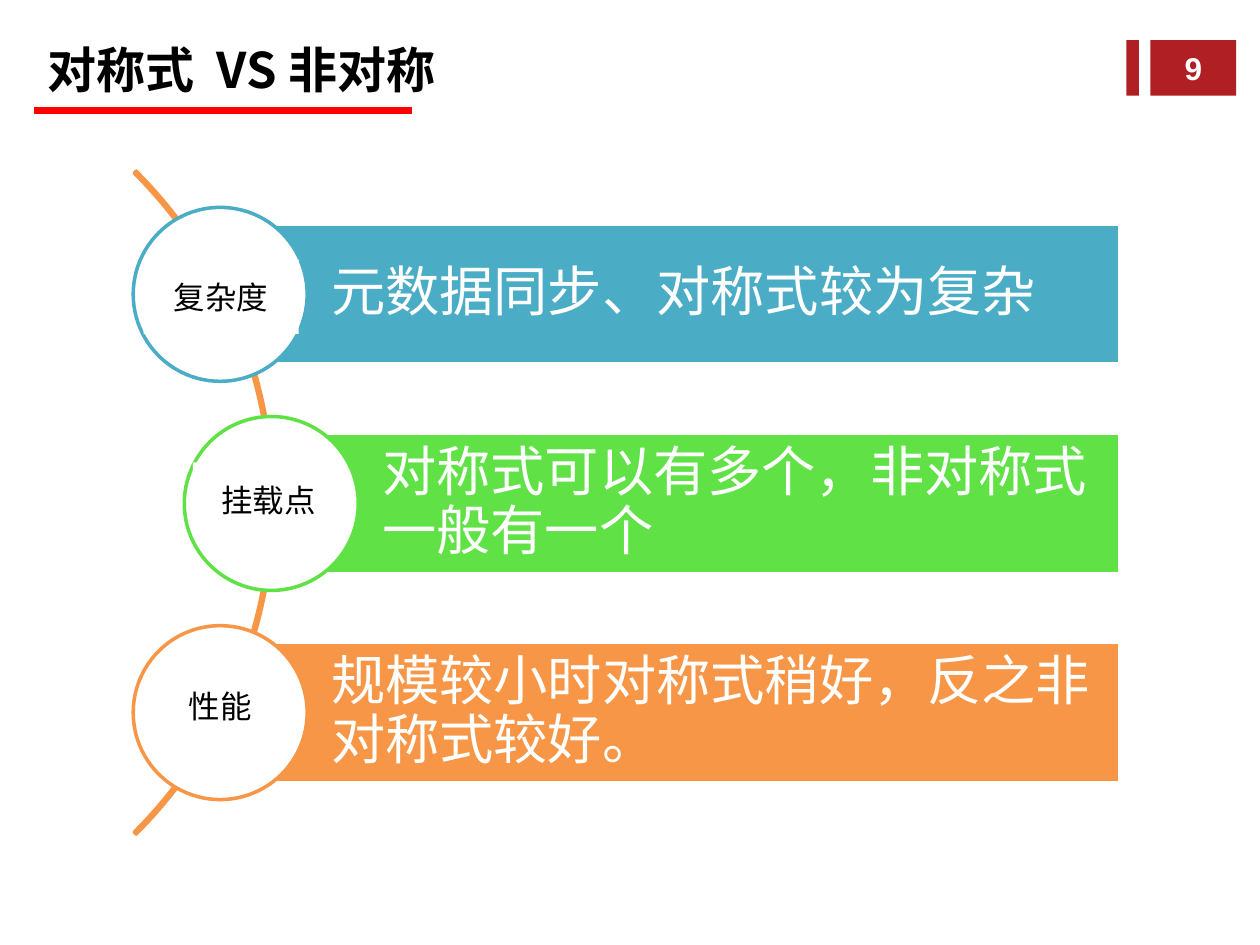
import dataclasses

import lxml.etree
import pptx
import pptx.dml.color
import pptx.enum.shapes
import pptx.enum.text
import pptx.oxml.ns
import pptx.util

Pt = pptx.util.Pt
RGB = pptx.dml.color.RGBColor
Kind = pptx.enum.shapes.MSO_SHAPE
Align = pptx.enum.text.PP_ALIGN
Box = tuple[float, float, float, float]

WHITE = RGB(0xFF, 0xFF, 0xFF)
BLACK = RGB(0, 0, 0)
RED = RGB(0xFF, 0, 0)
DARK = RGB(0xB0, 0x1F, 0x24)
BLUE = RGB(0x4B, 0xAC, 0xC6)
GREEN = RGB(0x60, 0xE1, 0x46)
ORANGE = RGB(0xF7, 0x96, 0x46)
HAN = "Noto Sans CJK SC"

TOP = 128.2
STEP = 119.5
BAR = 80
RING = 99.4
RIGHT = 639.7


@dataclasses.dataclass
class Row:
    name: str
    text: str
    color: RGB
    left: float
    label: Box


ROWS = [
    Row("复杂度", "元数据同步、对称式较为复杂", BLUE, 125.8, (82.1, 148.3, 88.6, 42.5)),
    Row("挂载点", "对称式可以有多个，非对称式一般有一个", GREEN, 155, (110.2, 264.2, 86.4, 42.5)),
    Row("性能", "规模较小时对称式稍好，反之非对称式较好。", ORANGE, 125.8, (87.8, 383.8, 76.3, 39.6)),
]


def write(shape, text: str, *, size: float, color: RGB, font: str = "Calibri",
          bold: bool = False, align=Align.CENTER, inset: float = 7.2,
          space: float = 1) -> None:
    frame = shape.text_frame
    frame.word_wrap = True
    frame.auto_size = pptx.enum.text.MSO_AUTO_SIZE.NONE
    frame.vertical_anchor = pptx.enum.text.MSO_ANCHOR.MIDDLE
    frame.margin_left = Pt(inset)
    para = frame.paragraphs[0]
    para.alignment = align
    para.line_spacing = space
    run = para.add_run()
    run.text = text
    run.font.size = Pt(size)
    run.font.name = font
    run.font.bold = bold
    run.font.color.rgb = color
    east = lxml.etree.SubElement(run.font._element, pptx.oxml.ns.qn("a:ea"))
    east.set("typeface", HAN)


def draw(slide, kind, box: Box, fill: RGB | None, line: RGB | None = None):
    shape = slide.shapes.add_shape(kind, *map(Pt, box))
    shape.shadow.inherit = False
    if fill is None:
        shape.fill.background()
    else:
        shape.fill.solid()
        shape.fill.fore_color.rgb = fill
    if line is None:
        shape.line.fill.background()
    else:
        shape.line.color.rgb = line
        shape.line.width = Pt(2)
    return shape


def rule(slide, left: float, right: float, y: float) -> None:
    line = slide.shapes.add_connector(
        pptx.enum.shapes.MSO_CONNECTOR.STRAIGHT, Pt(left), Pt(y), Pt(right), Pt(y))
    line.line.color.rgb = RED
    line.line.width = Pt(4)
    lxml.etree.SubElement(line._element.spPr, pptx.oxml.ns.qn("a:effectLst"))


def head(slide) -> None:
    title = slide.shapes.title
    title.left, title.top, title.width, title.height = map(Pt, (20.2, 17.3, 430.6, 44.6))
    write(title, "对称式  VS 非对称", size=28, color=BLACK, font=HAN, bold=True,
          align=Align.LEFT)
    rule(slide, 19.5, 235.4, 63.4)
    draw(slide, Kind.RECTANGLE, (643.7, 23, 7.2, 31.7), DARK)
    page = draw(slide, Kind.RECTANGLE, (657.4, 23, 49, 31.7), DARK)
    write(page, "9", size=18, color=WHITE, font="Arial", bold=True)


def band(slide, row: Row, top: float) -> None:
    bar = draw(slide, Kind.RECTANGLE, (row.left, top, RIGHT - row.left, BAR),
               row.color, WHITE)
    write(bar, row.text, size=31, color=WHITE, align=Align.LEFT, inset=63.4, space=0.9)
    ring = (row.left - RING / 2, top + (BAR - RING) / 2, RING, RING)
    draw(slide, Kind.OVAL, ring, WHITE, row.color)


def main() -> None:
    deck = pptx.Presentation()
    deck.slide_width, deck.slide_height = Pt(720), Pt(540)
    slide = deck.slides.add_slide(deck.slide_layouts[5])
    head(slide)
    arc = draw(slide, Kind.BLOCK_ARC, (-379.4, 19.4, 535.7, 535.7), None, ORANGE)
    for i, value in enumerate((189, 27, 0.003)):
        arc.adjustments[i] = value
    for i, row in enumerate(ROWS):
        band(slide, row, TOP + i * STEP)
    for row in ROWS:
        label = draw(slide, Kind.RECTANGLE, row.label, WHITE)
        write(label, row.name, size=18, color=BLACK)
    deck.save("out.pptx")


if __name__ == "__main__":
    main()
